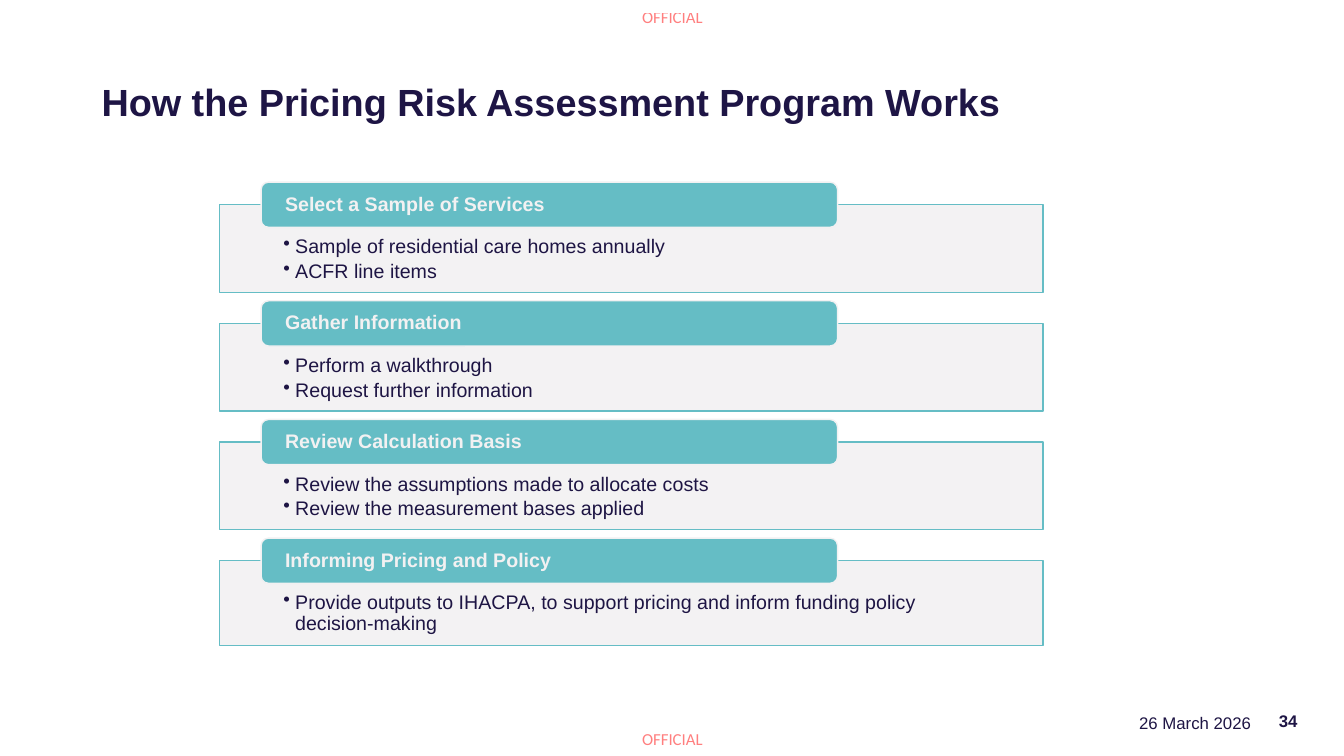
from dataclasses import dataclass

from pptx import Presentation
from pptx import util as u
from pptx.dml.color import RGBColor
from pptx.enum import shapes, text
from pptx.oxml import ns
from lxml import etree


@dataclass(frozen=True)
class Theme:
    """Colours, fonts and type sizes of the slide."""
    title: str = "1E1545"
    ink: str = "1E1544"
    teal: str = "65BDC5"
    pale: str = "F2F1F2"
    marking: str = "FF0000"
    font: str = "Arial"
    marking_font: str = "Calibri"
    title_size: float = 27
    body_size: float = 14
    small_size: float = 12


THEME = Theme()

STEPS = [
    ("Select a Sample of Services",
     ["Sample of residential care homes annually", "ACFR line items"], 2.21),
    ("Gather Information",
     ["Perform a walkthrough", "Request further information"], 2.21),
    ("Review Calculation Basis",
     ["Review the assumptions made to allocate costs",
      "Review the measurement bases applied"], 2.21),
    ("Informing Pricing and Policy",
     ["Provide outputs to IHACPA, to support pricing and inform "
      "funding policy decision-making"], 2.13),
]


def set_alpha(fill, percent):
    """Make a solid fill partly transparent."""
    color = next(fill._xPr.iter(ns.qn("a:srgbClr")))
    etree.SubElement(color, ns.qn("a:alpha")).set("val", str(percent * 1000))


def set_bullet(p, indent):
    """Give a paragraph a round bullet with a hanging indent."""
    pPr = p._p.get_or_add_pPr()
    pPr.set("marL", str(indent))
    pPr.set("indent", str(-indent))
    etree.SubElement(pPr, ns.qn("a:buChar")).set("char", "•")


def style(p, size, color, bold=False, font=THEME.font):
    """Format the runs of a paragraph."""
    for r in p.runs:
        r.font.name = font
        r.font.size = u.Pt(size)
        r.font.bold = bold
        r.font.color.rgb = RGBColor.from_string(color)


def set_insets(tf, left, top, right, bottom):
    """Set the text frame margins in centimetres."""
    tf.margin_left, tf.margin_top = u.Cm(left), u.Cm(top)
    tf.margin_right, tf.margin_bottom = u.Cm(right), u.Cm(bottom)


def add_panel(s, kind, box, fill, line):
    """Add a filled, outlined shape and return it."""
    sp = s.shapes.add_shape(kind, *map(u.Cm, box))
    sp.shadow.inherit = False
    sp.fill.solid()
    sp.fill.fore_color.rgb = RGBColor.from_string(fill)
    sp.line.color.rgb = RGBColor.from_string(line)
    sp.line.width = u.Pt(1)
    return sp


def add_label(s, box, words, size, color, bold=False, align=text.PP_ALIGN.LEFT):
    """Add a one-paragraph text box and return it."""
    sp = s.shapes.add_textbox(*map(u.Cm, box))
    tf = sp.text_frame
    tf.word_wrap = True
    tf.text = words
    tf.paragraphs[0].alignment = align
    style(tf.paragraphs[0], size, color, bold)
    return sp


def add_marking(s, box):
    """Add a security marking in the given box."""
    sp = add_label(s, box, "OFFICIAL", THEME.small_size, THEME.marking)
    tf = sp.text_frame
    tf.word_wrap = False
    set_insets(tf, 0, 0, 0, 0)
    p = tf.paragraphs[0]
    style(p, THEME.small_size, THEME.marking, font=THEME.marking_font)
    set_alpha(p.runs[0].font.fill, 50)


def add_title(s, box):
    """Add the slide title in the given box."""
    sp = add_label(s, box, "How the Pricing Risk Assessment Program Works",
                   THEME.title_size, THEME.title, True)
    sp.text_frame.vertical_anchor = text.MSO_ANCHOR.MIDDLE
    sp.text_frame.paragraphs[0].line_spacing = 0.9


def add_step(s, box, heading, points):
    """Add a bulleted panel with its heading tab over the top edge."""
    left, top, _, _ = box
    sp = add_panel(s, shapes.MSO_SHAPE.RECTANGLE, box, THEME.pale, THEME.teal)
    set_alpha(sp.fill, 90)
    tf = sp.text_frame
    tf.word_wrap = True
    tf.vertical_anchor = text.MSO_ANCHOR.TOP
    set_insets(tf, 1.6, 0.81, 1.6, 0.28)
    tf.text = "\n".join(points)
    for p in tf.paragraphs:
        set_bullet(p, u.Cm(0.3))
        p.alignment = text.PP_ALIGN.LEFT
        p.line_spacing = 0.9
        p.space_after = u.Pt(2.4)
        style(p, THEME.body_size, THEME.ink)

    tab = add_panel(s, shapes.MSO_SHAPE.ROUNDED_RECTANGLE,
                    (left + 1.04, top - 0.57, 14.53, 1.14),
                    THEME.teal, THEME.pale)
    tf = tab.text_frame
    tf.word_wrap = True
    tf.vertical_anchor = text.MSO_ANCHOR.MIDDLE
    set_insets(tf, 0.55, 0, 0.55, 0)
    tf.text = heading
    p = tf.paragraphs[0]
    p.alignment = text.PP_ALIGN.LEFT
    p.line_spacing = 0.9
    style(p, THEME.body_size, THEME.pale, True)


def add_steps(s, box, pitch):
    """Stack the steps at an equal pitch from the top of the box."""
    left, top, width = box
    for i, (heading, points, height) in enumerate(STEPS):
        add_step(s, (left, top + i * pitch, width, height), heading, points)


def add_footer(s, box):
    """Add the date and slide number side by side in the box."""
    left, top, width, height = box
    number_width = 1.17
    right = text.PP_ALIGN.RIGHT
    add_label(s, (left, top + 0.18, width - number_width, 0.76),
              "26 March 2026", THEME.small_size, THEME.ink, align=right)
    sp = add_label(s, (left + width - number_width, top, number_width, height),
                   "34", THEME.small_size, THEME.title, True, right)
    sp.text_frame.vertical_anchor = text.MSO_ANCHOR.MIDDLE


def main():
    """Build and save the slide."""
    prs = Presentation()
    prs.slide_width, prs.slide_height = u.Cm(33.87), u.Cm(19.05)
    s = prs.slides.add_slide(prs.slide_layouts[6])
    for top in (0.18, 18.36):
        add_marking(s, (16.18, top, 1.63, 0.51))
    add_title(s, (2.31, 1.88, 24.41, 1.52))
    add_steps(s, (5.54, 5.16, 20.75), 2.99)
    add_footer(s, (24.16, 17.65, 8.79, 1.02))
    prs.save("out.pptx")


if __name__ == "__main__":
    main()
